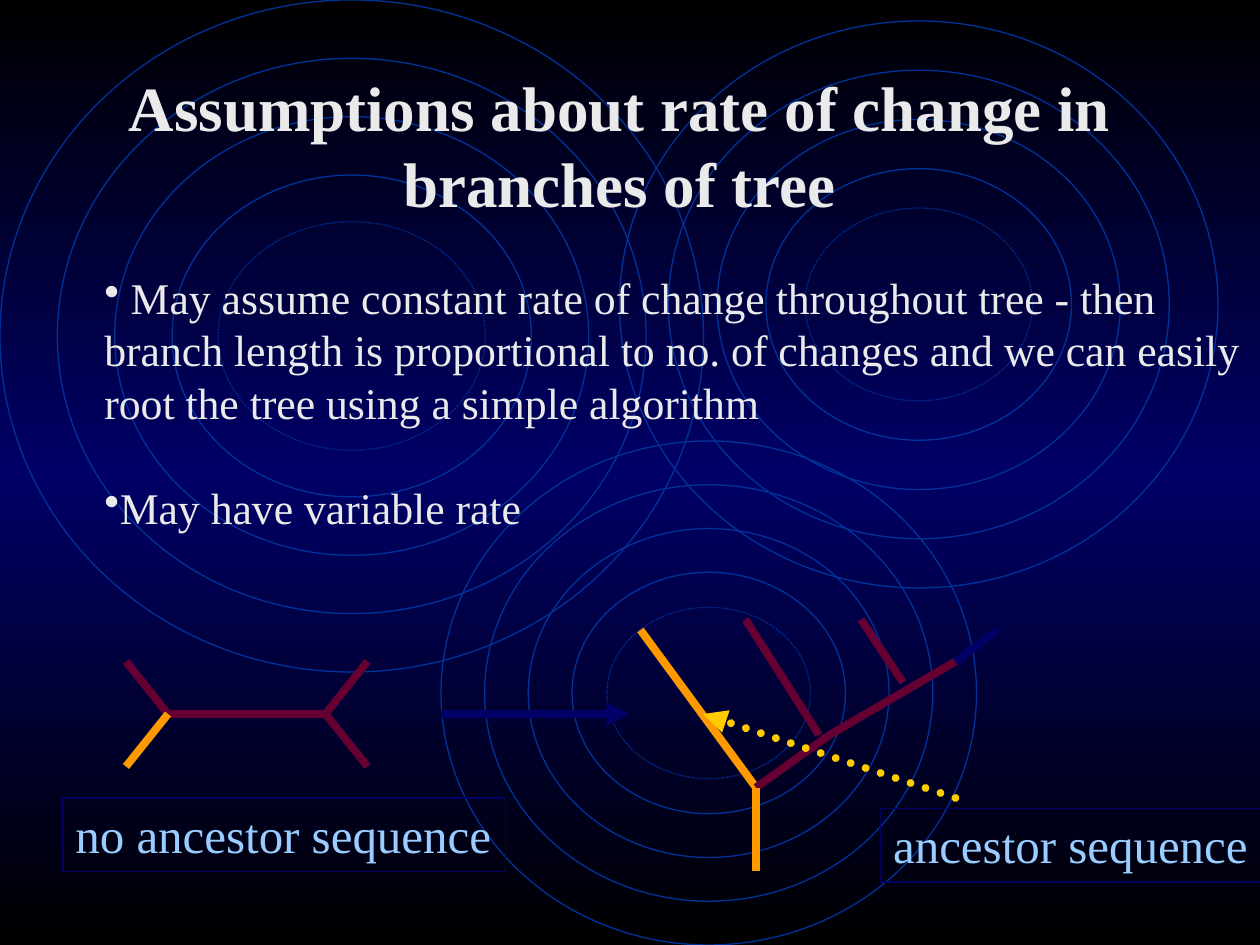
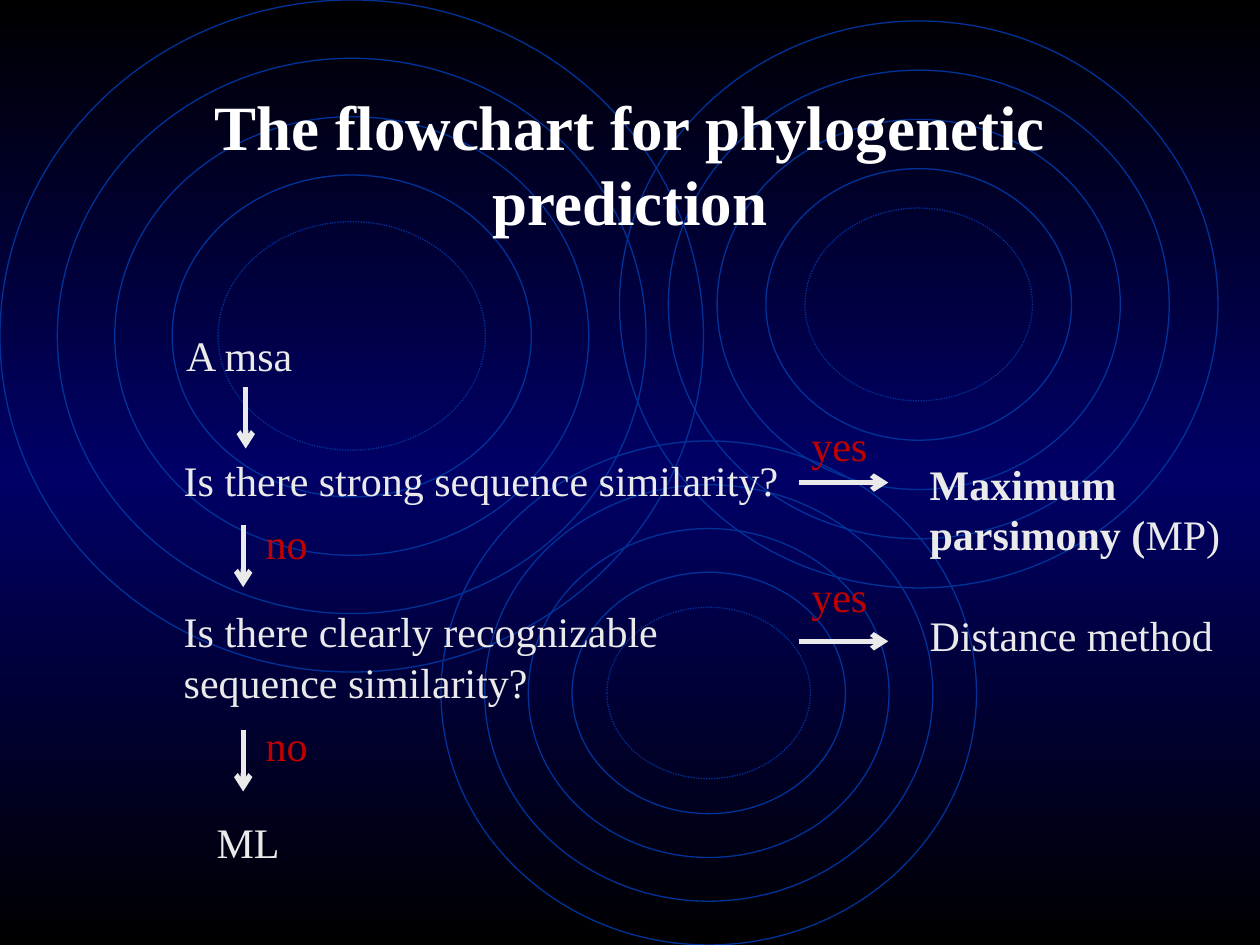
from copy import deepcopy
from lxml import etree
from pptx import Presentation, util as u
from pptx.dml.color import RGBColor
from pptx.enum import dml, shapes, text
from pptx.oxml.ns import qn

BLACK = RGBColor(0x00, 0x00, 0x00)
NAVY = RGBColor(0x00, 0x00, 0x66)
RING = RGBColor(0x00, 0x33, 0x99)
PALE = RGBColor(0xEA, 0xEA, 0xEA)
WHITE = RGBColor(0xFF, 0xFF, 0xFF)
SKY = RGBColor(0x99, 0xCC, 0xFF)
WINE = RGBColor(0x66, 0x00, 0x33)
ORANGE = RGBColor(0xFF, 0x99, 0x00)
GOLD = RGBColor(0xFF, 0xCC, 0x00)
RED = RGBColor(0xC0, 0x00, 0x00)
FONT = "Times New Roman"
LEADING = 1.2

prs = Presentation()
prs.slide_width, prs.slide_height = u.Inches(10), u.Inches(7.5)
CELL = prs.slide_width / 120


def write(sp, paras, size, color, wrap=True, bullet=None):
    tf = sp.text_frame
    tf.word_wrap = wrap
    tf.vertical_anchor = text.MSO_ANCHOR.TOP
    for i, (gap_lines, runs) in enumerate(paras):
        p = tf.add_paragraph() if i else tf.paragraphs[0]
        p.alignment = text.PP_ALIGN.LEFT
        p.line_spacing = u.Pt(size * LEADING)
        p.space_before = u.Pt(size * LEADING * gap_lines)
        if bullet:
            etree.SubElement(p._p.get_or_add_pPr(), qn("a:buChar")).set("char", bullet)
        for words, bold in runs:
            r = p.add_run()
            r.text = words
            r.font.name, r.font.size, r.font.bold = FONT, u.Pt(size), bold
            r.font.color.rgb = color


def draw_line(s, ends, color, width, head=None):
    cx = s.shapes.add_connector(shapes.MSO_CONNECTOR.STRAIGHT, *[round(v * CELL) for v in ends])
    cx.line.color.rgb = color
    cx.line.width = u.Pt(width)
    if head:
        etree.SubElement(cx.line._get_or_add_ln(), qn("a:tailEnd")).set("type", head)
    etree.SubElement(cx._element.spPr, qn("a:effectLst"))
    return cx


fill = prs.slide_master.background.fill
fill.gradient()
fill.gradient_angle = 270
first, middle = fill.gradient_stops
first.color.rgb, first.position = BLACK, 0
middle.color.rgb, middle.position = NAVY, 0.5
stops = prs.slide_master.element.find(".//" + qn("a:gsLst"))
stops.append(deepcopy(stops[0]))
stops[-1].set("pos", "100000")

RIPPLES = [(0, 0, 67, 64), (42, 42, 51, 48), (59, 2, 57, 54)]
DEPTHS = [0, 1, 2, 3, 3.8]
TITLES = [
    ("Assumptions about rate of change in branches of tree", 8, 6.25, PALE),
    ("The flowchart for phylogenetic prediction", 9, 8, WHITE),
]
slides = []
for title, left, top, color in TITLES:
    s = prs.slides.add_slide(prs.slide_layouts[6])
    slides.append(s)
    for x, y, w, h in RIPPLES:
        for depth in DEPTHS:
            share = depth / DEPTHS[-1]
            dx, dy = 0.31 * share * w, 0.33 * share * h
            box = (x + dx, y + dy, w - 2 * dx, h - 2 * dy)
            sp = s.shapes.add_shape(shapes.MSO_SHAPE.OVAL, *[round(v * CELL) for v in box])
            sp.shadow.inherit = False
            sp.fill.background()
            sp.line.color.rgb = RING
            sp.line.width = u.Pt(0.75)
            if depth == DEPTHS[-1]:
                sp.line.dash_style = dml.MSO_LINE.ROUND_DOT
    sp = s.shapes.add_textbox(*[round(v * CELL) for v in (left, top, 102, 15)])
    write(sp, [(0, [(title, True)])], 36, color)
    sp.text_frame.vertical_anchor = text.MSO_ANCHOR.MIDDLE
    sp.text_frame.paragraphs[0].alignment = text.PP_ALIGN.CENTER

tree, flow = slides

sp = tree.shapes.add_textbox(*[round(v * CELL) for v in (8.76, 25.2, 111.24, 26.4)])
write(sp, [
    (0, [(" May assume constant rate of change throughout tree - then branch length is "
          "proportional to no. of changes and we can easily root the tree using a simple "
          "algorithm", False)]),
    (1, [("May have variable rate", False)]),
], 25, PALE, bullet="•")

BRANCHES = [
    (16, 68, 31, 68, WINE), (31, 68, 35, 73, WINE), (12, 63, 16, 68, WINE),
    (35, 63, 31, 68, WINE), (16, 68, 12, 73, ORANGE),
    (61, 60, 72, 75, ORANGE), (71, 59, 78, 70, WINE), (79, 70, 91, 63, WINE),
    (95, 60, 91, 63, NAVY), (82, 59, 86, 65, WINE), (72, 75, 79, 70, WINE),
    (72, 75, 72, 83, ORANGE),
]
for *ends, color in BRANCHES:
    draw_line(tree, ends, color, 4.5)
draw_line(tree, (42, 68, 60, 68), NAVY, 4.5, "triangle")

for words, *box in [("no ancestor sequence", 6, 76, 42.12, 7),
                    ("ancestor sequence", 83.88, 77, 36.24, 7)]:
    sp = tree.shapes.add_shape(shapes.MSO_SHAPE.RECTANGLE, *[round(v * CELL) for v in box])
    sp.shadow.inherit = False
    sp.fill.background()
    sp.line.color.rgb = NAVY
    sp.line.width = u.Pt(0.75)
    write(sp, [(0, [(words, False)])], 28, SKY, wrap=False)

pointer = draw_line(tree, (91, 76, 67, 68), GOLD, 4.5, "triangle")
pointer.line.dash_style = dml.MSO_LINE.ROUND_DOT
pointer.line._get_or_add_ln().set("cap", "rnd")

STEPS = [
    ((16.56, 30.84, 13.68, 6), PALE, False, [(0, [("A msa", False)])]),
    ((16.32, 42.72, 59.76, 25.44), PALE, True, [
        (0, [("Is there strong sequence similarity?", False)]),
        (2, [("Is there clearly recognizable sequence similarity?", False)])]),
    ((87.36, 43.08, 32.64, 20.64), PALE, True, [
        (0, [("Maximum parsimony (", True), ("MP)", False)]),
        (1, [("Distance method", False)])]),
    ((19.44, 77.16, 8.52, 6.12), PALE, False, [(0, [("ML", False)])]),
    ((76.08, 39.36, 7.8, 20.64), RED, False, [(0, [("yes", False)]), (2, [("yes", False)])]),
    ((24.12, 48.72, 6.48, 25.44), RED, False, [(0, [("no", False)]), (3, [("no", False)])]),
]
boxes = []
for box, color, wrap, paras in STEPS:
    sp = flow.shapes.add_textbox(*[round(v * CELL) for v in box])
    write(sp, paras, 24, color, wrap)
    boxes.append(sp)

start = draw_line(flow, (23.4, 36.84, 23.4, 42.72), PALE, 3, "arrow")
start.begin_connect(boxes[0], 2)
for y in (50.04, 69.5):
    draw_line(flow, (23.16, y, 23.16, y + 5.88), PALE, 3, "arrow")
for y in (45.96, 61.08):
    draw_line(flow, (76.08, y, 84.6, y), PALE, 3, "arrow")

prs.save("out.pptx")
